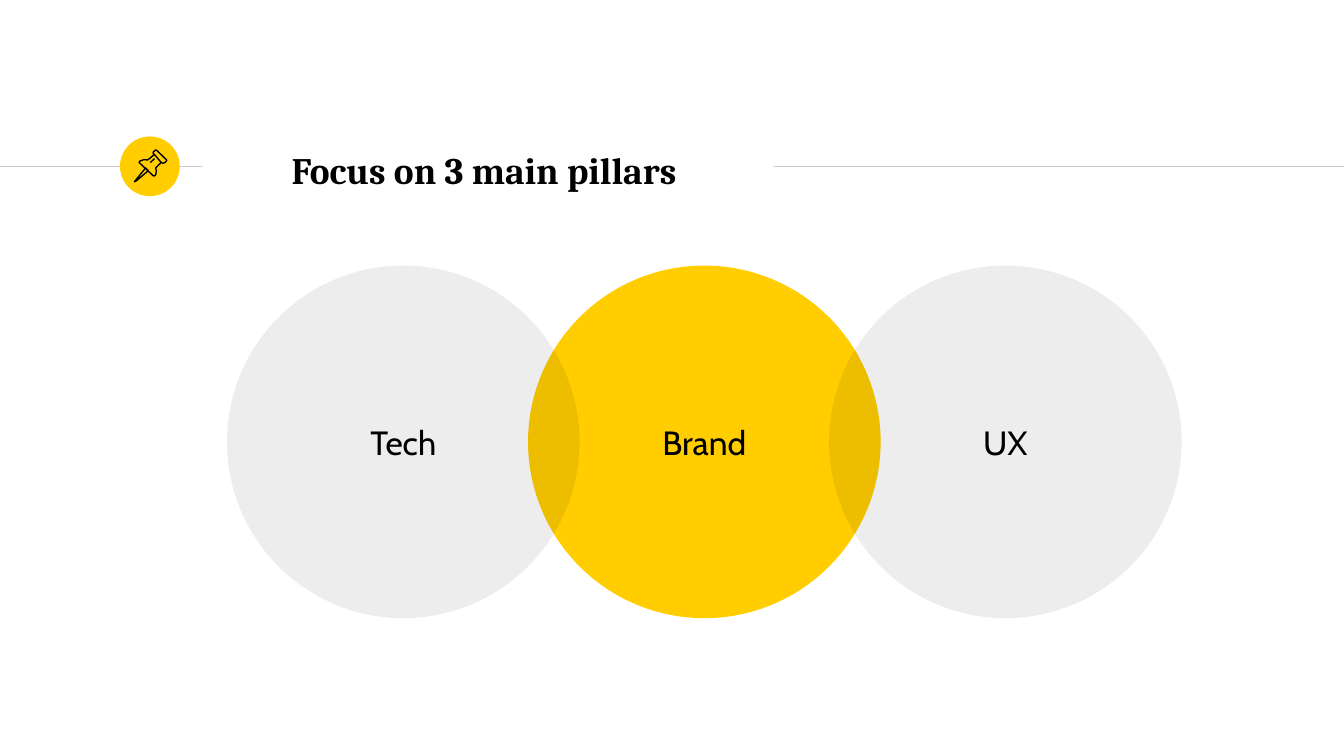
from pptx import Presentation
from pptx.dml.color import RGBColor
from pptx.enum.shapes import MSO_CONNECTOR, MSO_SHAPE
from pptx.enum.text import MSO_ANCHOR, PP_ALIGN
from pptx.oxml.ns import qn
from pptx.util import Pt
from lxml.etree import SubElement

HUES = {"gold": "FFCD00", "black": "000000", "rule": "CCCCCC"}


def disc(left, top, size, hue):
    shape = slide.shapes.add_shape(MSO_SHAPE.OVAL, Pt(left), Pt(top), Pt(size), Pt(size))
    shape.shadow.inherit = False
    shape.fill.solid()
    shape.fill.fore_color.rgb = RGBColor.from_string(HUES[hue])
    shape.line.fill.background()
    return shape


def label(shape, text, font, size, bold=False):
    frame = shape.text_frame
    frame.word_wrap = True
    frame.vertical_anchor = MSO_ANCHOR.MIDDLE
    frame.margin_left = frame.margin_right = Pt(7.2)
    frame.margin_top = frame.margin_bottom = Pt(7.2)
    frame.text = text
    para = frame.paragraphs[0]
    para.alignment = PP_ALIGN.CENTER
    style = para.runs[0].font
    style.name = font
    style.size = Pt(size)
    style.bold = bold
    style.color.rgb = RGBColor.from_string(HUES["black"])


deck = Presentation()
deck.slide_width = Pt(720)
deck.slide_height = Pt(405)
slide = deck.slides.add_slide(deck.slide_layouts[6])

for start, end in [(0, 108.2), (414.7, 720)]:
    rule = slide.shapes.add_connector(
        MSO_CONNECTOR.STRAIGHT, Pt(start), Pt(89.2), Pt(end), Pt(89.2))
    rule.line.color.rgb = RGBColor.from_string(HUES["rule"])
    rule.line.width = Pt(0.75)
    SubElement(rule._element.spPr, qn("a:effectLst"))

disc(64.3, 73.1, 32, "gold")

title = slide.shapes.add_textbox(Pt(108.9), Pt(73.4), Pt(305.4), Pt(34.6))
label(title, "Focus on 3 main pillars ", "Cambria", 20, True)

for spot, name, hue in [(1, "Brand", "gold"), (0, "Tech", "black"), (2, "UX", "black")]:
    circle = disc(121.6 + 161.3 * spot, 142.3, 188.9, hue)
    label(circle, name, "Cabin", 18)
    if hue == "black":
        tint = circle._element.spPr.find(qn("a:solidFill"))[0]
        SubElement(tint, qn("a:alpha"), val="7000")

needle = [(780, 900), (727, 965), (720, 974), (733, 967), (794, 915)]
head = [(828, 828), (864, 871), (873, 874), (885, 871), (893, 860), (892, 856),
        (839, 805), (833, 804), (822, 814), (820, 822)]
body = [(828, 828), (792, 857), (770, 856), (750, 863), (746, 868), (747, 872),
        (821, 942), (828, 943), (835, 935), (838, 915), (834, 900), (864, 871)]
crease = [(806, 871), (828, 850)]

pin = slide.shapes.add_group_shape()
for dots, shut in [(needle, True), (head, True), (body, False), (crease, False)]:
    pen = pin.shapes.build_freeform(*dots[0], scale=Pt(0.1))
    pen.add_line_segments(dots[1:], close=shut)
    part = pen.convert_to_shape()
    part.shadow.inherit = False
    part.fill.background()
    part.line.color.rgb = RGBColor.from_string(HUES["black"])
    part.line.width = Pt(0.75)

deck.save("out.pptx")
